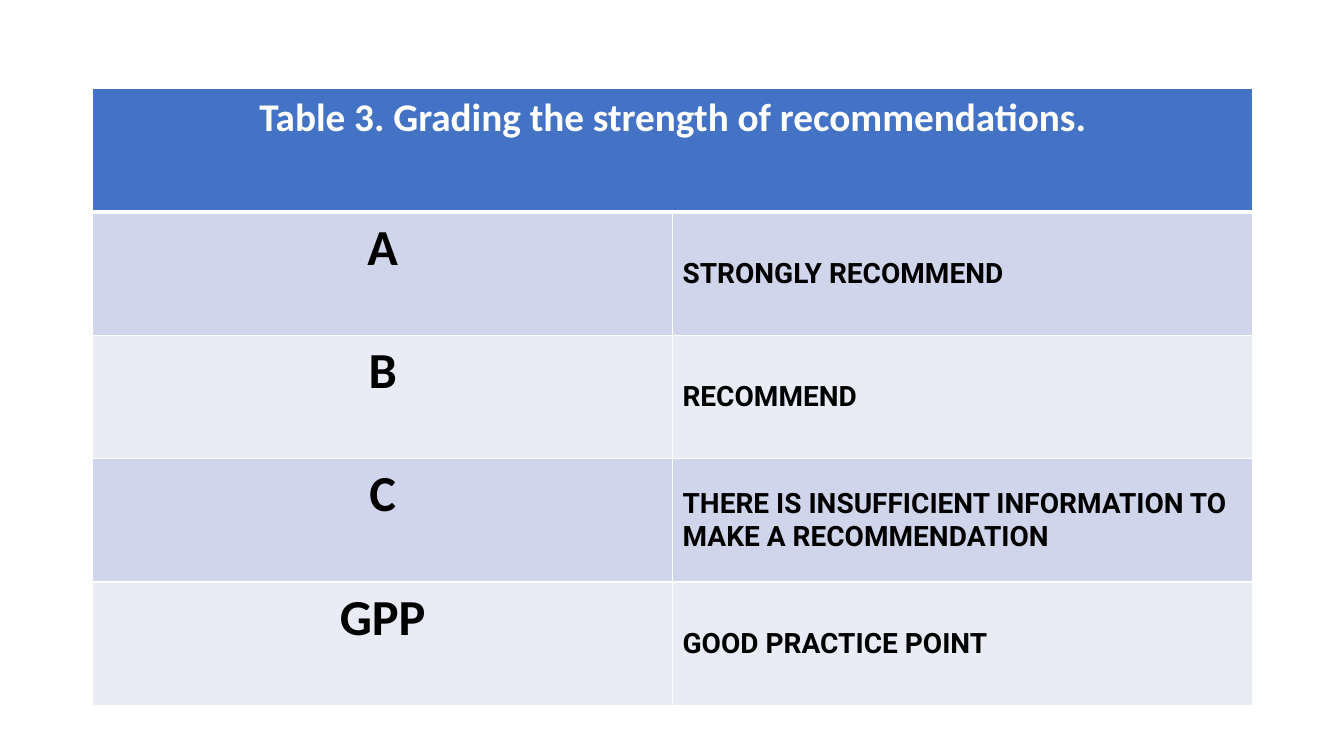
from dataclasses import dataclass
from lxml.etree import SubElement
from pptx import Presentation
from pptx.dml.color import RGBColor as RGB
from pptx.enum.text import MSO_ANCHOR as ANCHOR, PP_ALIGN as ALIGN
from pptx.oxml.ns import qn
from pptx.util import Inches, Pt


@dataclass(frozen=True)
class Theme:
    header: str = "4472C4"
    bands: tuple = ("CFD5EA", "E9EBF5")
    light: str = "FFFFFF"
    dark: str = "000000"
    main_font: str = "Calibri"
    meaning_font: str = "Roboto"
    title_size: int = 28
    grade_size: int = 36
    meaning_size: int = 20
    rule: int = 1
    header_rule: int = 3


THEME = Theme()
TITLE = "Table 3. Grading the strength of recommendations."
GRADES = [
    ("A", "STRONGLY RECOMMEND"),
    ("B", "RECOMMEND"),
    ("C", "THERE IS INSUFFICIENT INFORMATION TO MAKE A RECOMMENDATION"),
    ("GPP", "GOOD PRACTICE POINT"),
]
LEFT, TOP, COL_W, ROW_H = 0.92, 0.88, 5.75, 1.224


def set_borders(cell, top=THEME.rule, bottom=THEME.rule):
    tc_pr = cell._tc.get_or_add_tcPr()
    widths = {"L": THEME.rule, "R": THEME.rule, "T": top, "B": bottom}
    for side, width in widths.items():
        line = SubElement(tc_pr, qn(f"a:ln{side}"), w=str(Pt(width)))
        fill = SubElement(line, qn("a:solidFill"))
        SubElement(fill, qn("a:srgbClr"), val=THEME.light)


def fill_cell(cell, text, fill, size, font, color=THEME.dark,
              align=ALIGN.CENTER, anchor=ANCHOR.TOP):
    cell.fill.solid()
    cell.fill.fore_color.rgb = RGB.from_string(fill)
    cell.vertical_anchor = anchor
    p = cell.text_frame.paragraphs[0]
    p.text = text
    p.alignment = align
    p.font.name = font
    p.font.size = Pt(size)
    p.font.bold = True
    p.font.color.rgb = RGB.from_string(color)


def add_grid(s, rows, cols):
    frame = s.shapes.add_table(rows, cols, Inches(LEFT), Inches(TOP),
                               Inches(COL_W * cols), Inches(ROW_H * rows))
    return frame.table


def add_header(table):
    first, last = table.cell(0, 0), table.cell(0, 1)
    for cell in (first, last):
        set_borders(cell, bottom=THEME.header_rule)
    first.merge(last)
    fill_cell(first, TITLE, THEME.header, THEME.title_size,
              THEME.main_font, THEME.light)


def add_grade(table, row, grade, meaning):
    band = THEME.bands[(row - 1) % len(THEME.bands)]
    cells = table.cell(row, 0), table.cell(row, 1)
    for cell in cells:
        set_borders(cell, top=THEME.header_rule if row == 1 else THEME.rule)
    fill_cell(cells[0], grade, band, THEME.grade_size, THEME.main_font)
    fill_cell(cells[1], meaning, band, THEME.meaning_size,
              THEME.meaning_font, align=ALIGN.LEFT, anchor=ANCHOR.MIDDLE)


def main():
    prs = Presentation()
    prs.slide_width, prs.slide_height = Inches(13.33), Inches(7.5)
    s = prs.slides.add_slide(prs.slide_layouts[6])
    table = add_grid(s, len(GRADES) + 1, 2)
    add_header(table)
    for row, (grade, meaning) in enumerate(GRADES, 1):
        add_grade(table, row, grade, meaning)
    prs.save("out.pptx")


if __name__ == "__main__":
    main()
